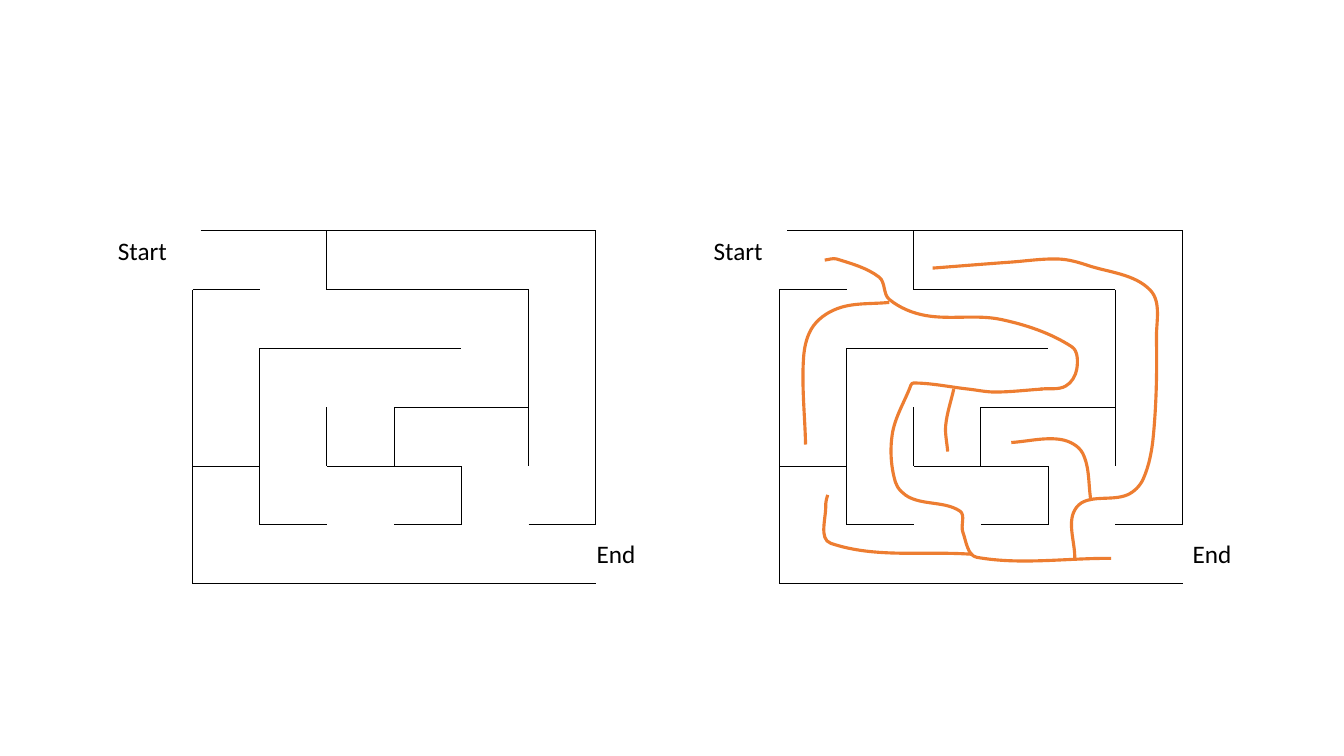
"""Build a slide with a walled maze and the same maze with its routes drawn in."""
import math
import pptx
import pptx.util
import pptx.enum.shapes
import pptx.enum.text
import pptx.dml.color
from lxml import etree
from pptx.oxml.ns import qn

BLACK = pptx.dml.color.RGBColor(0x00, 0x00, 0x00)
ORANGE = pptx.dml.color.RGBColor(0xED, 0x7D, 0x31)
SLIDE_W, SLIDE_H = 13.33, 7.5
CELL_W, CELL_H = SLIDE_W / 20, SLIDE_H * 7 / 90
MAZE_TOP = 2.29
ENTRY_SHIFT = 0.12

MAZES = [{"left": 1.91, "labels": 1.07}, {"left": 7.73, "labels": 6.98}]
LABELS = [("Start", 0, 2.29, 0.79), ("End", 4.75, 5.29, 0.7)]
LABEL_H = 0.43
LABEL_FONT = {"name": "Calibri", "size": pptx.util.Pt(18)}

ROW_WALLS = [".-----", "-.---.", ".---..", "...--.", "-.--..", ".-.-.-", ".....-"]
COLUMN_WALLS = ["......", "..|||.", "|..|..", "...|..", "....|.", ".|||..", "|||||."]
LONG_WALLS = [(5, 6, 0, 6), (0, 6, 0, 1), (ENTRY_SHIFT, 0, 1 + ENTRY_SHIFT, 0)]

ROUTES = [
    [(11.02, 5.54), (9.69, 5.53), (9.55, 5.28), (9.52, 5.07), (9.03, 4.94), (8.88, 4.78),
     (8.85, 4.31), (9.02, 3.86), (9.06, 3.8), (9.6, 3.86), (9.87, 3.89), (10.34, 3.86)],
    [(10.32, 3.86), (10.57, 3.83), (10.68, 3.66), (10.63, 3.44), (9.93, 3.17),
     (9.18, 3.13), (8.82, 2.97), (8.72, 2.75), (8.3, 2.57), (8.18, 2.58)],
    [(9.65, 5.5), (8.24, 5.39), (8.19, 5), (8.21, 4.91)],
    [(10.66, 5.55), (10.68, 5.03), (11.18, 4.91), (11.34, 4.75), (11.44, 4.32),
     (11.47, 3.36), (11.41, 2.88), (10.78, 2.63), (10.5, 2.57), (10.03, 2.6), (9.25, 2.66)],
    [(8.82, 3), (8.34, 3.05), (8.07, 3.23), (7.97, 3.55), (7.99, 4.41)],
    [(9.46, 3.86), (9.38, 4.22), (9.4, 4.48)],
    [(10.82, 4.97), (10.74, 4.5), (10.52, 4.36), (10.03, 4.39)],
]


def style_line(sp, color, width):
    sp.line.color.rgb = color
    sp.line.width = pptx.util.Pt(width)


def marked(rows):
    return [(i, j) for i, row in enumerate(rows) for j, mark in enumerate(row) if mark != "."]


def add_wall(s, left, wall):
    c1, r1, c2, r2 = wall
    ends = (left + c1 * CELL_W, MAZE_TOP + r1 * CELL_H,
            left + c2 * CELL_W, MAZE_TOP + r2 * CELL_H)
    sp = s.shapes.add_connector(pptx.enum.shapes.MSO_CONNECTOR.STRAIGHT,
                                *map(pptx.util.Inches, ends))
    style_line(sp, BLACK, 0.75)
    etree.SubElement(sp._element.spPr, qn("a:effectLst"))


def add_label(s, text, left, top, width):
    sp = s.shapes.add_textbox(*map(pptx.util.Inches, (left, top, width, LABEL_H)))
    tf = sp.text_frame
    tf.word_wrap = False
    tf.auto_size = pptx.enum.text.MSO_AUTO_SIZE.SHAPE_TO_FIT_TEXT
    r = tf.paragraphs[0].add_run()
    r.text = text
    for name, value in LABEL_FONT.items():
        setattr(r.font, name, value)
    r.font.color.rgb = BLACK


def smooth_controls(points):
    """Return two handles and an end point for each curve through the points."""
    ends = list(zip(points[:1] + points[:-1], points[1:] + points[-1:]))
    tangents = [((bx - ax) / math.dist((ax, ay), (bx, by)),
                 (by - ay) / math.dist((ax, ay), (bx, by))) for (ax, ay), (bx, by) in ends]
    controls = []
    for i, (a, b) in enumerate(zip(points, points[1:])):
        reach = math.dist(a, b) / 3
        (tx, ty), (ux, uy) = tangents[i:i + 2]
        controls += [(a[0] + tx * reach, a[1] + ty * reach),
                     (b[0] - ux * reach, b[1] - uy * reach), b]
    return controls


def add_route(s, points):
    start, *rest = [tuple(map(pptx.util.Inches, point))
                    for point in points[:1] + smooth_controls(points)]
    builder = s.shapes.build_freeform(*start, scale=1.0)
    builder.add_line_segments(rest, close=False)
    sp = builder.convert_to_shape()
    sp.shadow.inherit = False
    sp.fill.background()
    style_line(sp, ORANGE, 2.25)
    steps = list(sp._element.iter(qn("a:lnTo")))
    outline = steps[0].getparent()
    for i in range(0, len(steps), 3):
        curve = etree.SubElement(outline, qn("a:cubicBezTo"))
        for step in steps[i:i + 3]:
            curve.append(step[0])
            outline.remove(step)


def main():
    prs = pptx.Presentation()
    prs.slide_width = pptx.util.Inches(SLIDE_W)
    prs.slide_height = pptx.util.Inches(SLIDE_H)
    s = prs.slides.add_slide(prs.slide_layouts.get_by_name("Blank"))

    walls = [(c, r, c + 1, r) for r, c in marked(ROW_WALLS)]
    walls += [(c, r, c, r + 1) for c, r in marked(COLUMN_WALLS)]
    for maze in MAZES:
        for wall in walls + LONG_WALLS:
            add_wall(s, maze["left"], wall)
        for text, shift, top, width in LABELS:
            add_label(s, text, maze["labels"] + shift, top, width)
    for points in ROUTES:
        add_route(s, points)
    prs.save("out.pptx")


if __name__ == "__main__":
    main()
